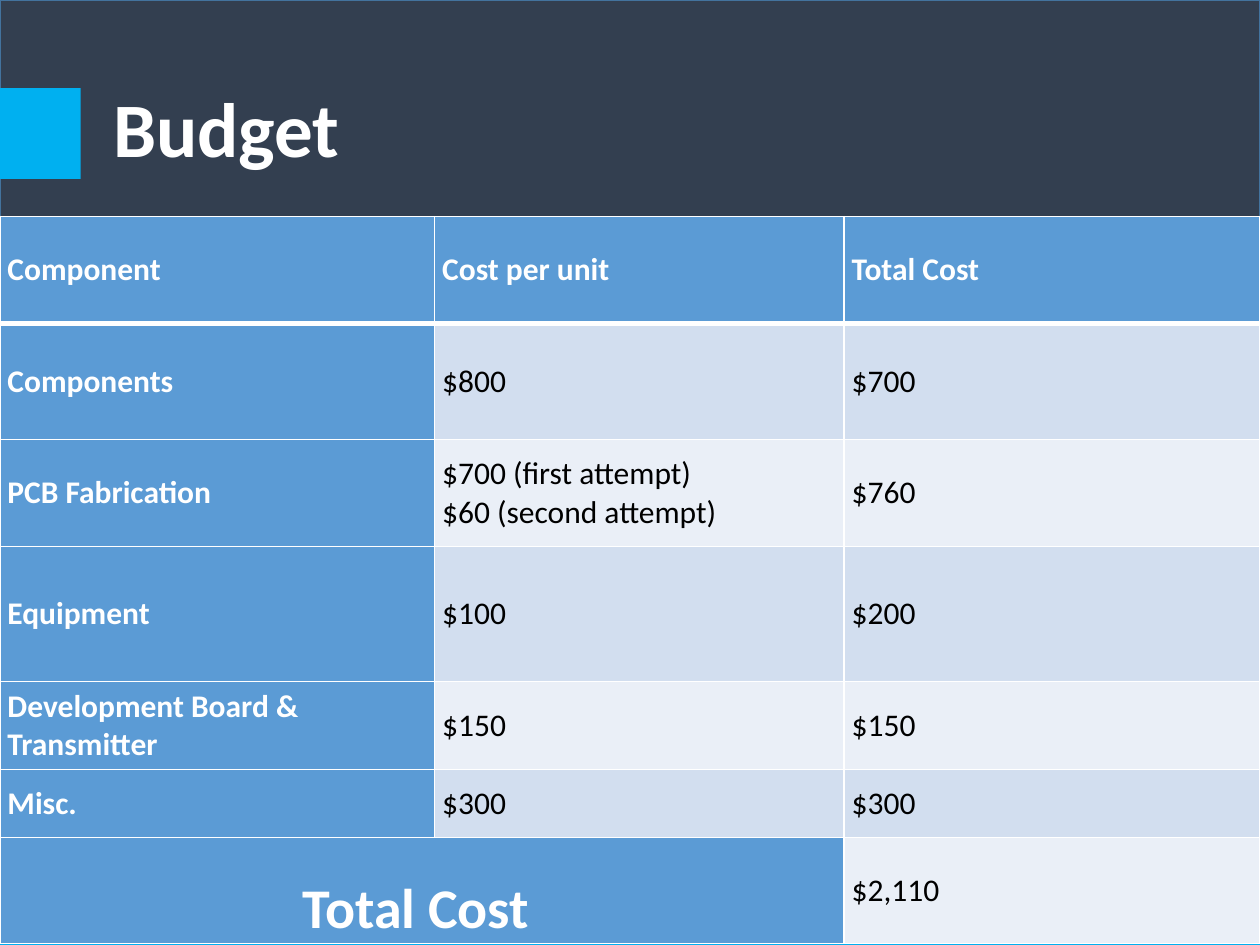
from lxml import etree
from pptx import Presentation
from pptx.dml.color import RGBColor
from pptx.enum import shapes, text
from pptx.oxml import ns
from pptx.util import Pt

WHITE = RGBColor(0xFF, 0xFF, 0xFF)
BLACK = RGBColor(0, 0, 0)
NAVY = RGBColor(0x33, 0x3F, 0x50)
EDGE = RGBColor(0x43, 0x73, 0x9E)
CYAN = RGBColor(0x00, 0xB0, 0xF0)
BLUE = RGBColor(0x5B, 0x9B, 0xD5)
BANDS = [RGBColor(0xD2, 0xDE, 0xEF), RGBColor(0xEA, 0xEF, 0xF7)]

WIDE, HIGH = 720, 540
TITLE = "Budget"
HEAD = ["Component", "Cost per unit", "Total Cost"]
ITEMS = [
    ["Components", "$800", "$700"],
    ["PCB Fabrication", "$700 (first attempt)\n$60 (second attempt)", "$760"],
    ["Equipment", "$100", "$200"],
    ["Development Board & Transmitter", "$150", "$150"],
    ["Misc.", "$300", "$300"],
]
TOTAL = ["Total Cost", "", "$2,110"]
COLS = [248.4, 234, 237.6]
ROWS = [61.2, 66.2, 61.2, 77, 50.4, 38.9, 60.5]
TOP = 123.8

# left, top, width, height, fill, line
PANELS = [
    (0, 0, WIDE, 509, NAVY, EDGE),
    (0, 509, WIDE, 31, CYAN, None),
    (0, 50.4, 46.1, 51.8, CYAN, None),
]


def write(frame, words, size=18, color=WHITE, bold=True, align=None, space=None):
    frame.word_wrap = True
    frame.text = words
    for para in frame.paragraphs:
        para.alignment = align
        para.line_spacing = space
        for run in para.runs:
            font = run.font
            font.name, font.size, font.bold = "Calibri", Pt(size), bold
            font.color.rgb = color


def panel(slide, left, top, width, height, fill, line):
    box = slide.shapes.add_shape(
        shapes.MSO_SHAPE.RECTANGLE, Pt(left), Pt(top), Pt(width), Pt(height))
    box.shadow.inherit = False
    box.fill.solid()
    box.fill.fore_color.rgb = fill
    if line is None:
        box.line.fill.background()
    else:
        box.line.color.rgb = line
        box.line.width = Pt(1)


def border(cell, **widths):
    """Draw white cell edges; keys are L, R, T and B, in points."""
    props = cell._tc.get_or_add_tcPr()
    for side, width in widths.items():
        line = etree.SubElement(props, ns.qn("a:ln" + side), w=str(Pt(width)))
        fill = etree.SubElement(line, ns.qn("a:solidFill"))
        etree.SubElement(fill, ns.qn("a:srgbClr"), val=str(WHITE))


def budget(slide):
    data = [HEAD, *ITEMS, TOTAL]
    table = slide.shapes.add_table(
        len(data), len(COLS), Pt(0), Pt(TOP), Pt(WIDE), Pt(sum(ROWS))).table
    for col, width in zip(table.columns, COLS):
        col.width = Pt(width)
    for r, (row, height) in enumerate(zip(data, ROWS)):
        table.rows[r].height = Pt(height)
        for c, words in enumerate(row):
            cell = table.cell(r, c)
            label = r == 0 or c == 0 or row is TOTAL and c == 1
            border(cell, L=1, R=1, T=3 if r == 1 else 1, B=3 if r == 0 else 1)
            cell.fill.solid()
            cell.fill.fore_color.rgb = BLUE if label else BANDS[(r - 1) % 2]
            cell.vertical_anchor = text.MSO_ANCHOR.MIDDLE
            cell.margin_left = cell.margin_right = Pt(4.3)
            cell.margin_top = cell.margin_bottom = Pt(0)
            write(cell.text_frame, words,
                  color=WHITE if label else BLACK, bold=label)

    last = len(data) - 1
    total = table.cell(last, 0)
    total.merge(table.cell(last, 1))
    total.margin_top, total.margin_right = Pt(21.5), Pt(11.5)
    write(total.text_frame, TOTAL[0], size=32, align=text.PP_ALIGN.CENTER)


def main():
    deck = Presentation()
    deck.slide_width, deck.slide_height = Pt(WIDE), Pt(HIGH)
    slide = deck.slides.add_slide(deck.slide_layouts[6])
    for spec_row in PANELS:
        panel(slide, *spec_row)
    title = slide.shapes.add_textbox(Pt(57.6), Pt(23.8), Pt(662.4), Pt(104.4))
    title.text_frame.vertical_anchor = text.MSO_ANCHOR.MIDDLE
    write(title.text_frame, TITLE, size=44, space=0.9)
    budget(slide)
    deck.save("out.pptx")


if __name__ == "__main__":
    main()
